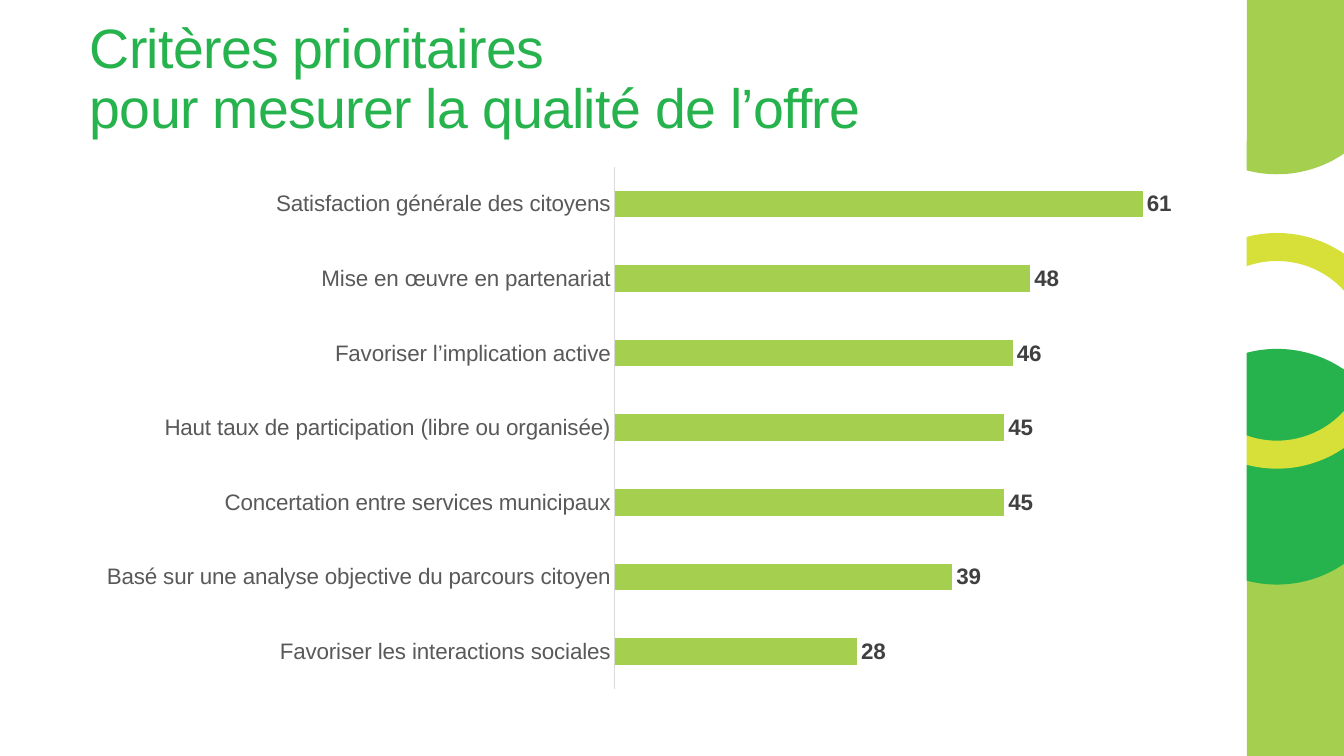
import pptx
import pptx.chart.data
import pptx.dml.color
import pptx.enum.chart
import pptx.enum.shapes
import pptx.enum.text
import pptx.oxml
import pptx.oxml.ns
import pptx.util

RGB = pptx.dml.color.RGBColor
Pt = pptx.util.Pt
LIME = RGB(0xA5, 0xCF, 0x4F)
GREEN = RGB(0x26, 0xB3, 0x4D)
YELLOW = RGB(0xD7, 0xE0, 0x39)
WHITE = RGB(0xFF, 0xFF, 0xFF)
GREY = RGB(0x59, 0x59, 0x59)
DARK = RGB(0x40, 0x40, 0x40)
PALE = RGB(0xD9, 0xD9, 0xD9)
BLACK = RGB(0, 0, 0)

WIDE = pptx.util.Inches(13.33)
HIGH = pptx.util.Inches(7.5)
COL = WIDE / 100
ROW = HIGH / 100
BAND = 92.76

SCORES = {
    "Satisfaction générale des citoyens": 61,
    "Mise en œuvre en partenariat": 48,
    "Favoriser l’implication active": 46,
    "Haut taux de participation (libre ou organisée)": 45,
    "Concertation entre services municipaux": 45,
    "Basé sur une analyse objective du parcours citoyen": 39,
    "Favoriser les interactions sociales": 28,
}


def area(left, top, width, height):
    return (round(left * COL), round(top * ROW),
            round(width * COL), round(height * ROW))


def style(font, size, color, bold=False):
    font.name = "Arial"
    font.size = Pt(size)
    font.color.rgb = color
    font.bold = bold


def block(slide, left, top, width, height, color):
    shape = slide.shapes.add_shape(
        pptx.enum.shapes.MSO_SHAPE.RECTANGLE, *area(left, top, width, height))
    shape.shadow.inherit = False
    shape.fill.solid()
    shape.fill.fore_color.rgb = color
    shape.line.fill.background()


def ring(slide, top, color, full=False):
    shape = slide.shapes.add_shape(
        pptx.enum.shapes.MSO_SHAPE.OVAL, *area(87.25, top, 15.53, 27.47))
    shape.shadow.inherit = False
    if full:
        shape.fill.solid()
        shape.fill.fore_color.rgb = color
    else:
        shape.fill.background()
    shape.line.color.rgb = color
    shape.line.width = Pt(20)


def border(slide):
    side = 100 - BAND
    block(slide, BAND, 74.07, side, 25.93, LIME)
    ring(slide, -6.27, LIME)
    block(slide, BAND, 0, side, 19.6, LIME)
    block(slide, BAND, 58.4, side, 15.67, GREEN)
    ring(slide, 48, GREEN, full=True)
    ring(slide, 32.67, YELLOW)
    block(slide, BAND - 7.28, 0, 7.28, 100, WHITE)


def heading(slide, text):
    title = slide.shapes.title
    title.left, title.top, title.width, title.height = area(
        5.93, 5.33, 81.32, 13.87)
    frame = title.text_frame
    frame.text = text
    frame.word_wrap = True
    frame.auto_size = pptx.enum.text.MSO_AUTO_SIZE.NONE
    frame.vertical_anchor = pptx.enum.text.MSO_ANCHOR.BOTTOM
    para = frame.paragraphs[0]
    para.alignment = pptx.enum.text.PP_ALIGN.LEFT
    para.line_spacing = 0.9
    para.space_before = Pt(0)
    for run in para.runs:
        style(run.font, 39.6, GREEN)
        run.font._element.set("spc", "-50")


def place(chart, left, top, width, height):
    plot = chart.element.find(".//" + pptx.oxml.ns.qn("c:plotArea"))
    for old in plot.findall(pptx.oxml.ns.qn("c:layout")):
        plot.remove(old)
    plot.insert(0, pptx.oxml.parse_xml(
        f'<c:layout {pptx.oxml.ns.nsdecls("c")}><c:manualLayout>'
        '<c:layoutTarget val="inner"/>'
        '<c:xMode val="edge"/><c:yMode val="edge"/>'
        f'<c:x val="{left}"/><c:y val="{top}"/>'
        f'<c:w val="{width}"/><c:h val="{height}"/>'
        '</c:manualLayout></c:layout>'))


def bars(slide, scores):
    enum = pptx.enum.chart
    data = pptx.chart.data.CategoryChartData()
    data.categories = list(scores)
    data.add_series("Series 1", list(scores.values()))
    chart = slide.shapes.add_chart(
        enum.XL_CHART_TYPE.BAR_CLUSTERED,
        *area(3.15, 14.13, 108.93, 79.07), data).chart
    chart.has_legend = False
    chart.has_title = False
    style(chart.font, 10, BLACK)
    place(chart, 0.391, 0.1, 0.414, 0.874)

    axis = chart.category_axis
    axis.reverse_order = True
    axis.major_tick_mark = enum.XL_TICK_MARK.NONE
    axis.minor_tick_mark = enum.XL_TICK_MARK.NONE
    axis.format.line.color.rgb = PALE
    axis.format.line.width = Pt(0.75)
    style(axis.tick_labels.font, 16, GREY)

    scale = chart.value_axis
    scale.minimum_scale = 0
    scale.maximum_scale = 70
    scale.has_major_gridlines = False
    scale.visible = False

    plot = chart.plots[0]
    plot.gap_width = 182
    plot.vary_by_categories = False
    series = plot.series[0]
    series.format.fill.solid()
    series.format.fill.fore_color.rgb = LIME
    labels = series.data_labels
    labels.show_value = True
    labels.position = enum.XL_LABEL_POSITION.OUTSIDE_END
    style(labels.font, 16, DARK, bold=True)


def main():
    deck = pptx.Presentation()
    deck.slide_width = WIDE
    deck.slide_height = HIGH
    slide = deck.slides.add_slide(deck.slide_layouts[5])
    border(slide)
    heading(slide, "Critères prioritaires \vpour mesurer la qualité de l’offre")
    bars(slide, SCORES)
    deck.save("out.pptx")


if __name__ == "__main__":
    main()
